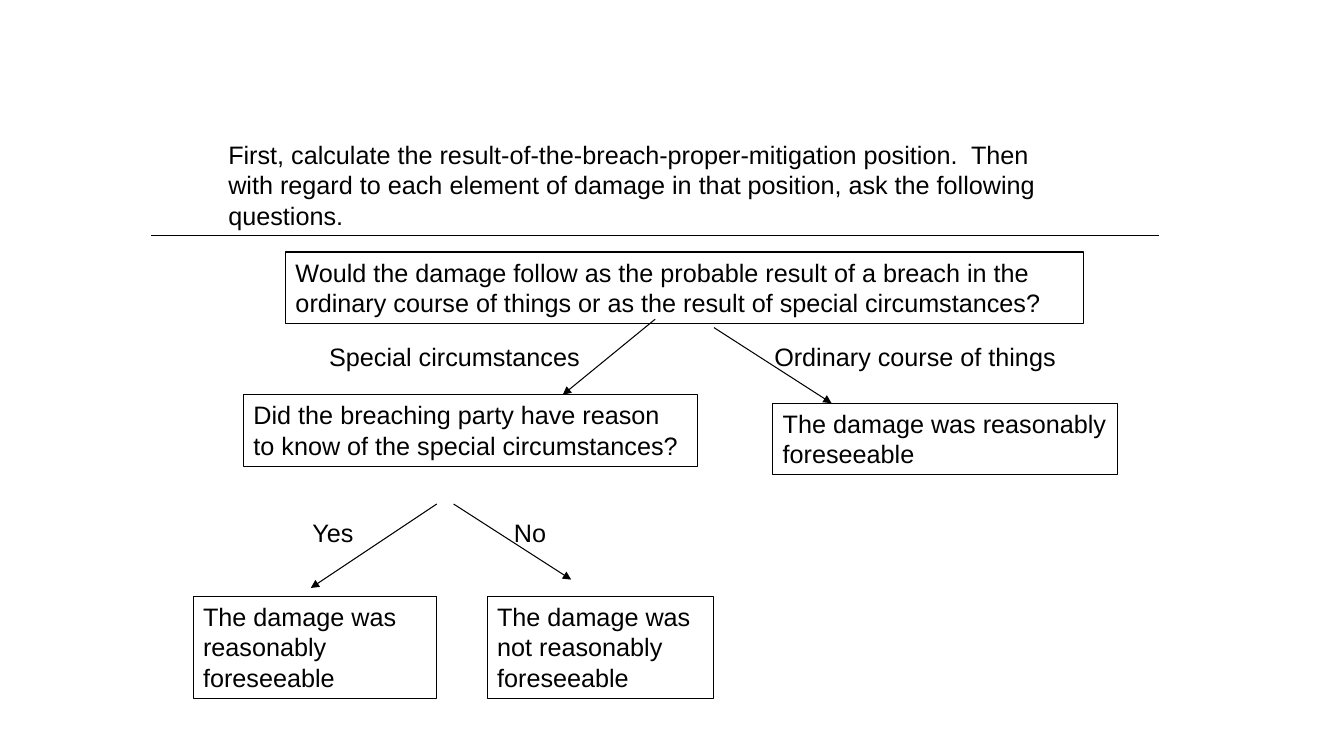
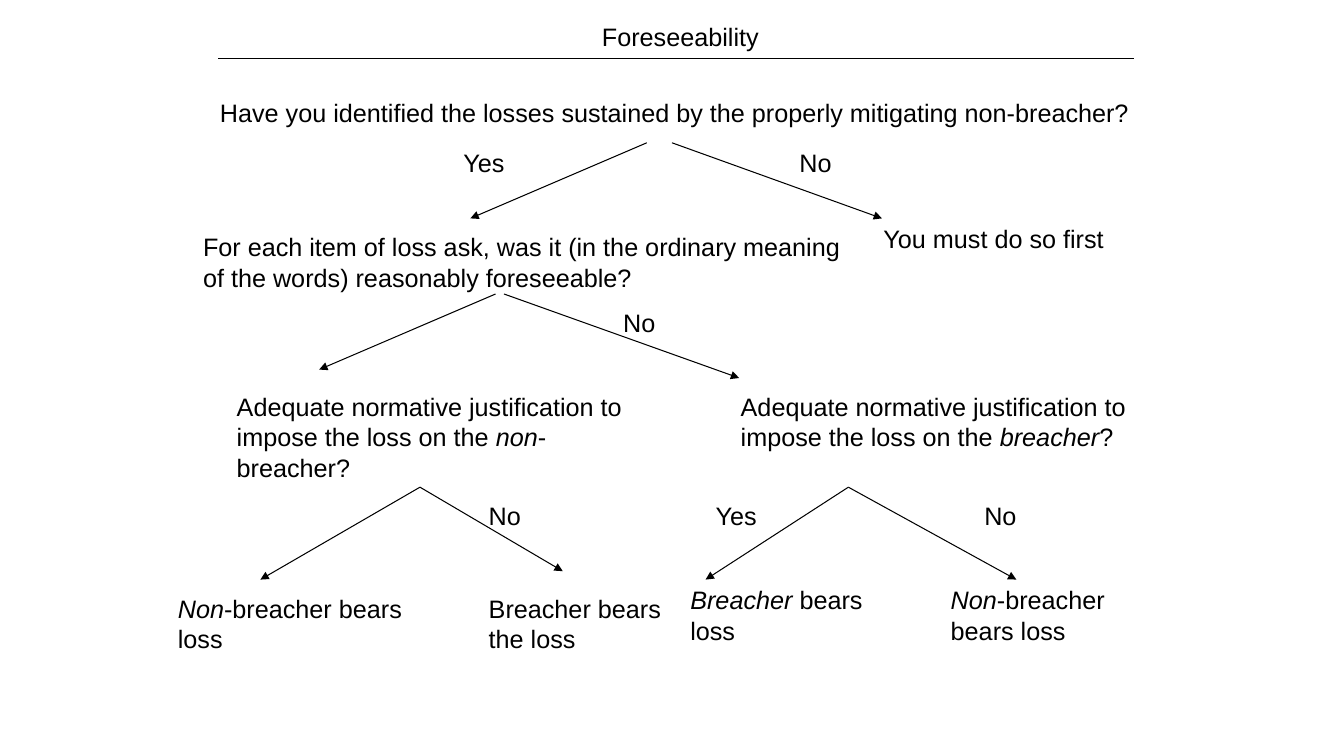
from dataclasses import dataclass

from lxml import etree
from pptx import Presentation
from pptx.dml.color import RGBColor
from pptx.enum.shapes import MSO_CONNECTOR, MSO_SHAPE
from pptx.enum.text import MSO_ANCHOR, MSO_AUTO_SIZE, PP_ALIGN
from pptx.oxml.ns import qn
from pptx.slide import Slide
from pptx.util import Pt

RECT = MSO_SHAPE.RECTANGLE
STRAIGHT = MSO_CONNECTOR.STRAIGHT
LEFT, CENTER = PP_ALIGN.LEFT, PP_ALIGN.CENTER

COLORS = {"ink": "000000", "paper": "FFFFFF"}
FONT = {"name": "Arial", "size": Pt(18)}
FRAME = {
    "word_wrap": True,
    "auto_size": MSO_AUTO_SIZE.SHAPE_TO_FIT_TEXT,
    "vertical_anchor": MSO_ANCHOR.TOP,
}
LINE_WIDTH = 0.75
LINE_HEIGHT, PADDING = 22, 7


@dataclass(frozen=True)
class Label:
    """Text in which *asterisks* mark italics; lengths in points."""
    text: str
    x: float
    y: float
    w: float
    lines: int = 1
    boxed: bool = False
    align: PP_ALIGN = LEFT


@dataclass(frozen=True)
class Line:
    x1: float
    y1: float
    x2: float
    y2: float
    arrow: bool = True


@dataclass(frozen=True)
class Chart:
    lines: tuple[Line, ...]
    labels: tuple[Label, ...]


DAMAGE = Chart(
    lines=(
        Line(108, 168, 828, 168, arrow=False),
        Line(468, 228, 402, 282),
        Line(510, 234, 594, 288),
        Line(312, 360, 222, 420),
        Line(324, 360, 408, 414),
    ),
    labels=(
        Label("First, calculate the result-of-the-breach-proper-mitigation position.  "
              "Then with regard to each element of damage in that position, "
              "ask the following questions.", 156, 96, 600, 3),
        Label("Would the damage follow as the probable result of a breach in the "
              "ordinary course of things or as the result of special circumstances?",
              204, 180, 570, 2, boxed=True),
        Label("Special circumstances", 228, 240, 204),
        Label("Ordinary course of things", 546, 240, 216),
        Label("Did the breaching party have reason to know of the special circumstances?",
              174, 282, 324, 2, boxed=True),
        Label("The damage was reasonably foreseeable", 552, 288, 246, 2, boxed=True),
        Label("Yes", 216, 366, 54),
        Label("No", 360, 366, 48),
        Label("The damage was reasonably foreseeable", 138, 426, 174, 3, boxed=True),
        Label("The damage was not reasonably foreseeable", 348, 426, 162, 3, boxed=True),
    ),
)

FORESEEABILITY = Chart(
    lines=(
        Line(156, 42, 810, 42, arrow=False),
        Line(462, 102, 336, 156),
        Line(480, 102, 630, 156),
        Line(354, 210, 228, 264),
        Line(360, 210, 528, 270),
        Line(300, 348, 186, 414),
        Line(300, 348, 402, 408),
        Line(606, 348, 504, 414),
        Line(606, 348, 726, 414),
    ),
    labels=(
        Label("Foreseeability", 156, 12, 660, align=CENTER),
        Label("Have you identified the losses sustained by the properly mitigating "
              "non-breacher?", 150, 66, 666),
        Label("Yes", 324, 102, 66),
        Label("No", 564, 102, 42),
        Label("For each item of loss ask, was it (in the ordinary meaning of the words) "
              "reasonably foreseeable?", 138, 162, 474, 2),
        Label("You must do so first", 624, 156, 174),
        Label("No", 438, 216, 42),
        Label("Adequate normative justification to impose the loss on the *non*-breacher?",
              162, 276, 300, 3),
        Label("Adequate normative justification to impose the loss on the *breacher*?",
              522, 276, 300, 2),
        Label("No", 342, 354, 42),
        Label("Yes", 504, 354, 48),
        Label("No", 696, 354, 42),
        Label("*Non*-breacher bears loss", 120, 420, 186, 2),
        Label("Breacher bears the loss", 342, 420, 156, 2),
        Label("*Breacher* bears loss", 486, 414, 156, 2),
        Label("*Non*-breacher bears loss", 672, 414, 168, 2),
    ),
)


def rgb(name: str) -> RGBColor:
    return RGBColor.from_string(COLORS[name])


def set_all(target: object, values: dict) -> None:
    for name, value in values.items():
        setattr(target, name, value)


def add_line(slide: Slide, line: Line) -> None:
    sp = slide.shapes.add_connector(
        STRAIGHT, Pt(line.x1), Pt(line.y1), Pt(line.x2), Pt(line.y2))
    sp.line.width = Pt(LINE_WIDTH)
    sp.line.color.rgb = rgb("ink")
    if line.arrow:
        etree.SubElement(sp.line._get_or_add_ln(), qn("a:tailEnd"), type="triangle")
    etree.SubElement(sp._element.spPr, qn("a:effectLst"))


def add_label(slide: Slide, label: Label) -> None:
    height = PADDING + LINE_HEIGHT * label.lines
    place = Pt(label.x), Pt(label.y), Pt(label.w), Pt(height)
    if label.boxed:
        sp = slide.shapes.add_shape(RECT, *place)
        sp.shadow.inherit = False
        sp.fill.background()
        sp.line.width = Pt(LINE_WIDTH)
        sp.line.color.rgb = rgb("ink")
    else:
        sp = slide.shapes.add_textbox(*place)
    tf = sp.text_frame
    set_all(tf, FRAME)
    p = tf.paragraphs[0]
    p.alignment = label.align
    for i, part in enumerate(label.text.split("*")):
        if part:
            r = p.add_run()
            r.text = part
            set_all(r.font, FONT | {"italic": i % 2 == 1})
            r.font.color.rgb = rgb("ink")


def add_chart_slide(prs: Presentation, chart: Chart) -> None:
    slide = prs.slides.add_slide(prs.slide_layouts[6])
    fill = slide.background.fill
    fill.solid()
    fill.fore_color.rgb = rgb("paper")
    for line in chart.lines:
        add_line(slide, line)
    for label in chart.labels:
        add_label(slide, label)


def main() -> None:
    prs = Presentation()
    prs.slide_width, prs.slide_height = Pt(960), Pt(540)
    for chart in (DAMAGE, FORESEEABILITY):
        add_chart_slide(prs, chart)
    prs.save("out.pptx")


if __name__ == "__main__":
    main()
